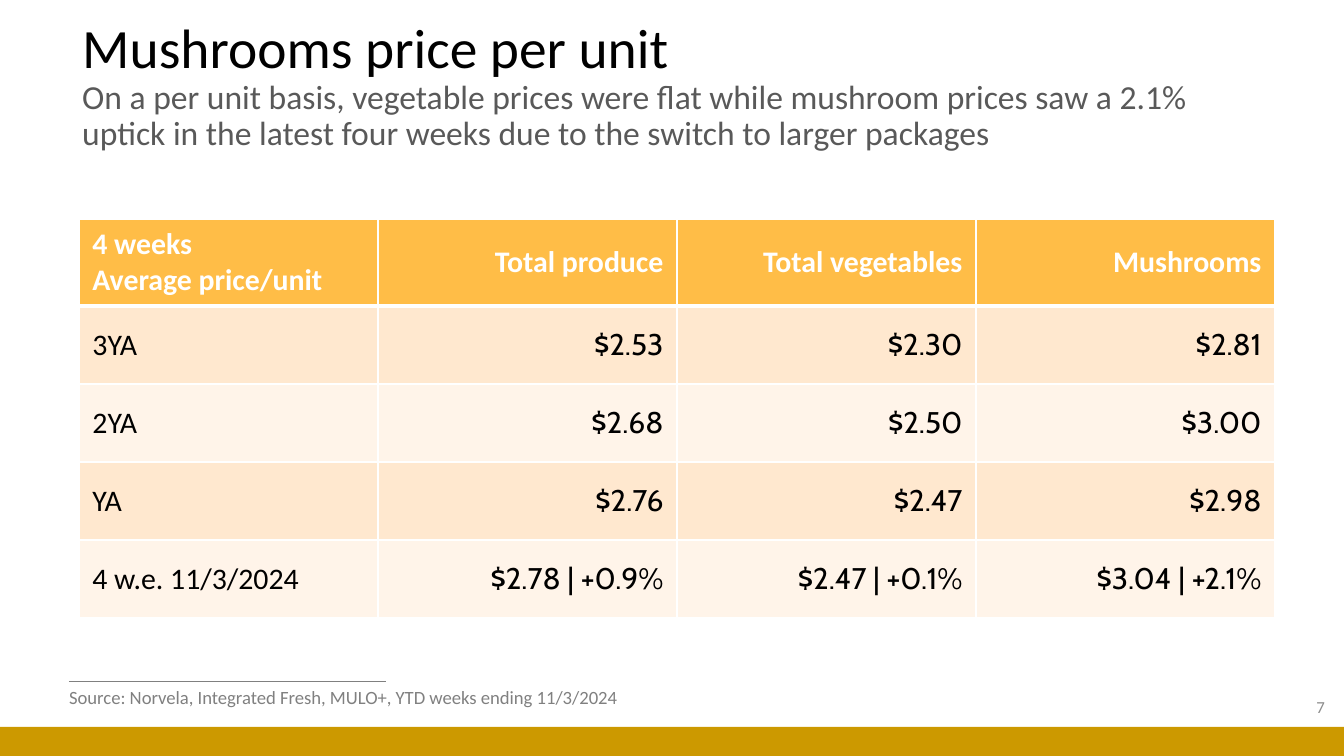
from dataclasses import dataclass

from lxml import etree
from pptx import Presentation, util as u
from pptx.dml.color import RGBColor
from pptx.enum import shapes, text
from pptx.oxml.ns import qn

EMU_PER_PX = 914400 / 134.4
WHITE, BLACK, GREY = "FFFFFF", "000000", "808080"
HEADER_FILL, BAND_FILLS = "FFBD47", ("FFE8CF", "FFF4E9")
LEFT, RIGHT = text.PP_ALIGN.LEFT, text.PP_ALIGN.RIGHT
TOP, MIDDLE = text.MSO_ANCHOR.TOP, text.MSO_ANCHOR.MIDDLE


@dataclass(frozen=True)
class Box:
    left: int
    top: int
    width: int
    height: int

    def emu(self):
        return [px(n) for n in (self.left, self.top, self.width, self.height)]


@dataclass(frozen=True)
class PriceRow:
    period: str
    prices: tuple[str, ...]


HEADER = PriceRow("4 weeks\nAverage price/unit",
                  ("Total produce", "Total vegetables", "Mushrooms"))
PRICE_ROWS = (
    PriceRow("3YA", ("$2.53", "$2.30", "$2.81")),
    PriceRow("2YA", ("$2.68", "$2.50", "$3.00")),
    PriceRow("YA", ("$2.76", "$2.47", "$2.98")),
    PriceRow("4 w.e. 11/3/2024", ("$2.78 | +0.9%", "$2.47 | +0.1%", "$3.04 | +2.1%")),
)


def px(length: int) -> u.Emu:
    return u.Emu(round(length * EMU_PER_PX))


def rgb(code: str) -> RGBColor:
    return RGBColor.from_string(code)


def write(paragraph, words: str, *, size: float, color: str = BLACK,
          font: str = "Calibri", bold: bool = False, align=LEFT) -> None:
    """Append words to the paragraph; each newline becomes a line break."""
    paragraph.alignment = align
    for index, line in enumerate(words.split("\n")):
        if index:
            paragraph.add_line_break()
            line_break = paragraph._p.findall(qn("a:br"))[-1]
            etree.SubElement(line_break, qn("a:rPr"), sz=str(round(size * 100)))
        if line:
            run = paragraph.add_run()
            run.text = line
            run.font.size = u.Pt(size)
            run.font.name = font
            run.font.bold = bold
            run.font.color.rgb = rgb(color)


def add_text_box(slide, box: Box, *, anchor=TOP, wrap: bool = True):
    """Return the first paragraph of a new text box."""
    frame = slide.shapes.add_textbox(*box.emu()).text_frame
    frame.word_wrap = wrap
    frame.vertical_anchor = anchor
    return frame.paragraphs[0]


def add_footer(slide) -> None:
    rule = slide.shapes.add_connector(shapes.MSO_CONNECTOR.STRAIGHT,
                                      px(69), px(682), px(386), px(682))
    rule.line.color.rgb = rgb(GREY)
    rule.line.width = u.Pt(0.5)
    etree.SubElement(rule._element.spPr, qn("a:effectLst"))

    band = slide.shapes.add_shape(shapes.MSO_SHAPE.RECTANGLE, *Box(0, 727, 1344, 29).emu())
    band.shadow.inherit = False
    band.fill.solid()
    band.fill.fore_color.rgb = rgb("CC9900")
    band.line.fill.background()

    page_number = add_text_box(slide, Box(1036, 687, 302, 40), anchor=MIDDLE)
    write(page_number, "7", size=9, color="8C8C8C", align=RIGHT)
    source = add_text_box(slide, Box(56, 679, 579, 36), wrap=False)
    write(source, "Source: Norvela, Integrated Fresh, MULO+, YTD weeks ending 11/3/2024",
          size=10, color=GREY)


def add_title(slide) -> None:
    title = add_text_box(slide, Box(69, 50, 1218, 73), anchor=MIDDLE)
    title.line_spacing = 0.9
    write(title, "Mushrooms price per unit\n", size=29.7)
    write(title, "On a per unit basis, vegetable prices were flat while mushroom prices saw a 2.1% \n"
          "uptick in the latest four weeks due to the switch to larger packages",
          size=18, color="595959")


def style_cell(cell, fill: str, top: float, bottom: float) -> None:
    """Give the cell white borders (in points) and a fill, in schema order."""
    properties = cell._tc.get_or_add_tcPr()
    for side, width in (("L", 1), ("R", 1), ("T", top), ("B", bottom)):
        border = etree.SubElement(properties, qn(f"a:ln{side}"), w=str(u.Pt(width)))
        solid = etree.SubElement(border, qn("a:solidFill"))
        etree.SubElement(solid, qn("a:srgbClr"), val=WHITE)
    cell.fill.solid()
    cell.fill.fore_color.rgb = rgb(fill)
    cell.vertical_anchor = MIDDLE


def add_price_table(slide) -> None:
    rows = (HEADER, *PRICE_ROWS)
    columns = 1 + len(HEADER.prices)
    table = slide.shapes.add_table(len(rows), columns, *Box(79, 219, 1196, 399).emu()).table
    table.horz_banding = False
    for column in table.columns:
        column.width = px(299)
    for r, row in enumerate(rows):
        is_header = r == 0
        table.rows[r].height = px(87 if is_header else 78)
        fill = HEADER_FILL if is_header else BAND_FILLS[(r - 1) % 2]
        for c, words in enumerate((row.period, *row.prices)):
            cell = table.cell(r, c)
            style_cell(cell, fill, top=3 if r == 1 else 1, bottom=3 if is_header else 1)
            write(cell.text_frame.paragraphs[0], words, size=16, bold=is_header,
                  color=WHITE if is_header else BLACK,
                  font="Calibri" if is_header or c == 0 else "Cabin",
                  align=RIGHT if c else LEFT)


def main() -> None:
    deck = Presentation()
    deck.slide_width, deck.slide_height = px(1344), px(756)
    slide = deck.slides.add_slide(deck.slide_layouts[6])
    add_footer(slide)
    add_title(slide)
    add_price_table(slide)
    deck.save("out.pptx")


if __name__ == "__main__":
    main()
